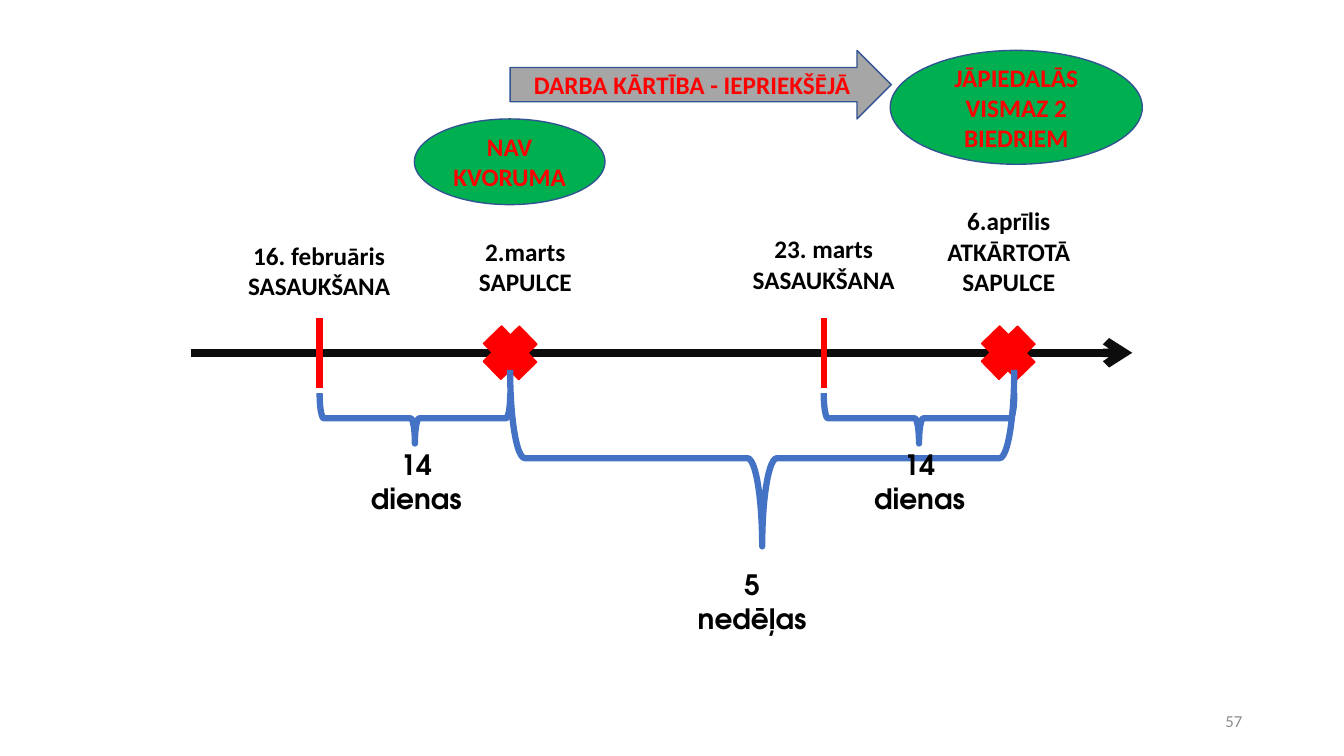
import pptx
import pptx.util
import pptx.dml.color
import pptx.enum.shapes
import pptx.enum.text
import pptx.oxml
import pptx.oxml.ns

Inches = pptx.util.Inches
Shape = pptx.enum.shapes.MSO_SHAPE
Align = pptx.enum.text.PP_ALIGN
Anchor = pptx.enum.text.MSO_ANCHOR

COLORS = {"text": "000000", "muted": "8C8C8C", "axis": "0D0D0D", "red": "FF0000",
          "brace": "4472C4", "green": "00B050", "gray": "A6A6A6", "outline": "325491"}


class TimelineSlide:
    body_font = "Calibri"
    span_font = "TeX Gyre Adventor"

    def __init__(self, slide):
        self.slide = slide

    def color(self, name):
        return pptx.dml.color.RGBColor.from_string(COLORS[name])

    def set_text(self, shape, text, size=18, font=body_font, color="text", bold=True,
                 align=Align.CENTER, anchor=Anchor.TOP, margin=0.05):
        frame = shape.text_frame
        frame.word_wrap = True
        frame.vertical_anchor = anchor
        frame.margin_left = frame.margin_right = Inches(margin)
        frame.text = text
        para = frame.paragraphs[0]
        para.alignment = align
        span = para.runs[0]
        span.font.name = font
        span.font.size = pptx.util.Pt(size)
        span.font.bold = bold
        span.font.color.rgb = self.color(color)

    def label(self, text, left, top, width, height, **style):
        box = self.slide.shapes.add_textbox(
            Inches(left), Inches(top), Inches(width), Inches(height))
        self.set_text(box, text, **style)

    def shape(self, kind, left, top, width, height, fill, line, weight=1):
        shape = self.slide.shapes.add_shape(
            kind, Inches(left), Inches(top), Inches(width), Inches(height))
        shape.shadow.inherit = False
        if fill:
            shape.fill.solid()
            shape.fill.fore_color.rgb = self.color(fill)
        else:
            shape.fill.background()
        shape.line.color.rgb = self.color(line)
        shape.line.width = pptx.util.Pt(weight)
        return shape

    def callout(self, kind, text, left, top, width, height, fill):
        shape = self.shape(kind, left, top, width, height, fill, "outline")
        self.set_text(shape, text, color="red", anchor=Anchor.MIDDLE)

    def cross(self, center_x, center_y, size=0.5):
        shape = self.shape(Shape.CROSS, center_x - size / 2, center_y - size / 2,
                           size, size, "red", "red")
        shape.rotation = 315.8

    def brace(self, start, end, top, depth):
        # A left brace turned to point down, so its width is the depth
        length = end - start
        shape = self.shape(Shape.LEFT_BRACE, (start + end - depth) / 2,
                           top + (depth - length) / 2, depth, length,
                           None, "brace", 4.5)
        shape.rotation = 270

    def line(self, x1, y1, x2, y2, color, weight, arrow=False):
        line = self.slide.shapes.add_connector(
            pptx.enum.shapes.MSO_CONNECTOR.STRAIGHT,
            Inches(x1), Inches(y1), Inches(x2), Inches(y2))
        line.line.color.rgb = self.color(color)
        line.line.width = pptx.util.Pt(weight)
        properties = line._element.spPr
        namespace = pptx.oxml.ns.nsdecls("a")
        if arrow:
            properties.find(pptx.oxml.ns.qn("a:ln")).append(
                pptx.oxml.parse_xml(f'<a:tailEnd {namespace} type="arrow"/>'))
        properties.append(pptx.oxml.parse_xml(f'<a:effectLst {namespace}/>'))


def main():
    deck = pptx.Presentation()
    deck.slide_width, deck.slide_height = Inches(13.33), Inches(7.5)
    page = TimelineSlide(deck.slides.add_slide(deck.slide_layouts[6]))

    # Slide number
    page.label("57", 9.42, 6.95, 3, 0.4, size=12, color="muted", bold=False,
               align=Align.RIGHT, anchor=Anchor.MIDDLE, margin=0.1)

    # Time axis with meetings (crosses) and notices (ticks)
    axis_y = 3.5
    first_notice, first_meeting, second_notice, second_meeting = 3.17, 5.06, 8.17, 10.06
    page.line(1.89, axis_y, 11.23, axis_y, "axis", 6, arrow=True)
    for meeting in (first_meeting, second_meeting - 0.06):
        page.cross(meeting, axis_y)
    for notice in (first_notice, second_notice):
        page.line(notice, axis_y - 0.35, notice, axis_y + 0.35, "red", 4.5)

    # Braces for the periods
    page.brace(first_notice, first_meeting, 3.9, 0.5)
    page.brace(second_notice, second_meeting, 3.9, 0.5)
    page.brace(first_meeting, second_meeting, 3.67, 1.75)
    for text, left, top in (("14 dienas", 3.42, 4.39), ("5 nedēļas", 6.75, 5.58),
                            ("14 dienas", 8.41, 4.39)):
        page.label(text, left, top, 1.42, 0.77, size=20, font=page.span_font, margin=0.1)

    # Event labels
    for text, left, top, width, height in (
            ("16. februāris SASAUKŠANA", 2.36, 2.33, 1.61, 0.71),
            ("2.marts SAPULCE", 4.42, 2.29, 1.58, 0.71),
            ("23. marts SASAUKŠANA", 7.28, 2.27, 1.78, 0.71),
            ("6.aprīlis ATKĀRTOTĀ SAPULCE", 9.21, 1.99, 1.59, 1.01)):
        page.label(text, left, top, width, height)

    # Callouts
    page.callout(Shape.OVAL, "NAV KVORUMA", 4.11, 1.18, 1.89, 0.85, "green")
    page.callout(Shape.OVAL, "JĀPIEDALĀS VISMAZ 2 BIEDRIEM", 8.83, 0.5, 2.5, 1.13, "green")
    page.callout(Shape.RIGHT_ARROW, "DARBA KĀRTĪBA - IEPRIEKŠĒJĀ",
                 5.06, 0.5, 3.78, 0.68, "gray")

    deck.save("out.pptx")


if __name__ == "__main__":
    main()
